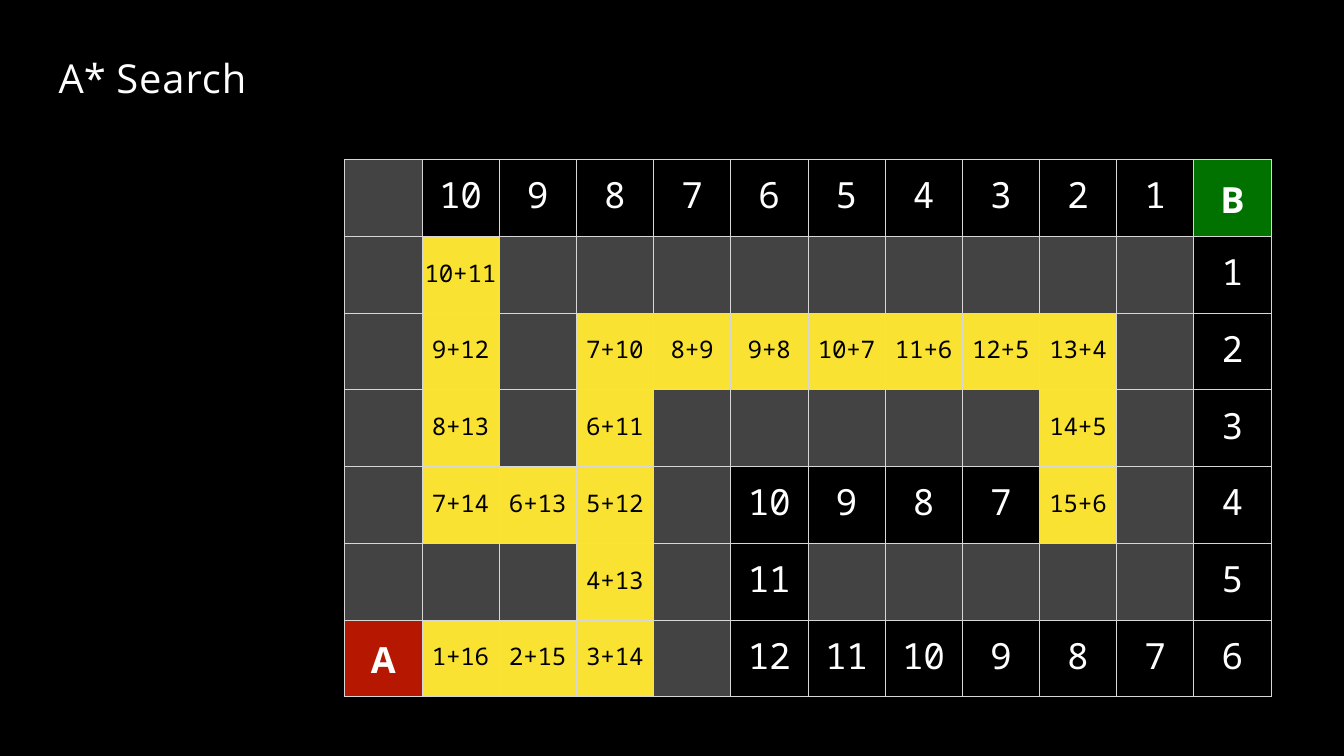
from lxml.etree import SubElement as Sub
from pptx import Presentation
from pptx.dml.color import RGBColor as Rgb
from pptx.enum.text import MSO_AUTO_SIZE as Auto, PP_ALIGN as Align
from pptx.oxml.ns import qn
from pptx.util import Inches, Pt

HUES = {"back": "000000", "line": "D6D7D6", "wall": "434343", "path": "FAE232",
        "start": "B51700", "goal": "017100", "light": "FFFFFF", "dark": "000000"}
SANS, MONO = "Open Sans", "Noto Sans Mono"
WIDE, HIGH = 21.99, 12.37

# "#" is a wall, a sum is an explored cell, a plain number is an open cell
MAZE = """
# 10 9 8 7 6 5 4 3 2 1 B
# 10+11 # # # # # # # # # 1
# 9+12 # 7+10 8+9 9+8 10+7 11+6 12+5 13+4 # 2
# 8+13 # 6+11 # # # # # 14+5 # 3
# 7+14 6+13 5+12 # 10 9 8 7 15+6 # 4
# # # 4+13 # 11 # # # # # 5
A 1+16 2+15 3+14 # 12 11 10 9 8 7 6
"""
rows = [line.split() for line in MAZE.strip().splitlines()]

# fill, top margin in inches, letter spacing in points, font format
LOOKS = {
    "open": (None, 0.18, -0.5, dict(name=MONO, size=Pt(42.5), bold=False), "light"),
    "path": ("path", 0.33, -0.2, dict(name=MONO, size=Pt(28.5), bold=False), "dark"),
    "A": ("start", 0.25, 2, dict(name=SANS, size=Pt(42.5), bold=True), "light"),
    "B": ("goal", 0.26, 3.5, dict(name=SANS, size=Pt(42.5), bold=True), "light"),
}


def write(para, text, form, hue, gap=0):
    """Add a run; gap is the letter spacing in points."""
    run = para.add_run()
    run.text = text
    for key, value in form.items():
        setattr(run.font, key, value)
    run.font.color.rgb = Rgb.from_string(HUES[hue])
    run.font._element.set("spc", str(round(gap * 100)))


def edge(cell):
    """Draw a thin line on all four sides of a cell."""
    props = cell._tc.get_or_add_tcPr()
    for side in "LRTB":
        line = Sub(props, qn(f"a:ln{side}"), w=str(Pt(1)))
        Sub(Sub(line, qn("a:solidFill")), qn("a:srgbClr"), val=HUES["line"])


deck = Presentation()
deck.slide_width, deck.slide_height = Inches(WIDE), Inches(HIGH)
slide = deck.slides.add_slide(deck.slide_layouts[6])
slide.background.fill.solid()
slide.background.fill.fore_color.rgb = Rgb.from_string(HUES["back"])

# Maze
box = [Inches(n) for n in (5.64, 2.61, 15.16, 8.79)]
table = slide.shapes.add_table(len(rows), len(rows[0]), *box).table
table.first_row = table.horz_banding = False
for y, row in enumerate(rows):
    for x, text in enumerate(row):
        cell = table.cell(y, x)
        edge(cell)
        if text == "#":
            fill = "wall"
        else:
            kind = text if text in "AB" else "path" if "+" in text else "open"
            fill, top, gap, form, hue = LOOKS[kind]
            cell.margin_left = cell.margin_right = cell.margin_bottom = 0
            cell.margin_top = Inches(top)
            para = cell.text_frame.paragraphs[0]
            para.alignment = Align.CENTER
            write(para, text, form, hue, gap)
        if fill:
            cell.fill.solid()
            cell.fill.fore_color.rgb = Rgb.from_string(HUES[fill])
        else:
            cell.fill.background()

# Title
box = [Inches(n) for n in (0.96, 0.86, 12.65, 0.81)]
frame = slide.shapes.add_textbox(*box).text_frame
look = dict(margin_left=0, margin_right=0, margin_bottom=0, margin_top=Inches(0.01),
            word_wrap=True, auto_size=Auto.SHAPE_TO_FIT_TEXT)
for key, value in look.items():
    setattr(frame, key, value)
for text, gap in (("A* ", 0), ("Search", 1.1)):
    write(frame.paragraphs[0], text, dict(name=SANS, size=Pt(47)), "light", gap)

deck.save("out.pptx")
